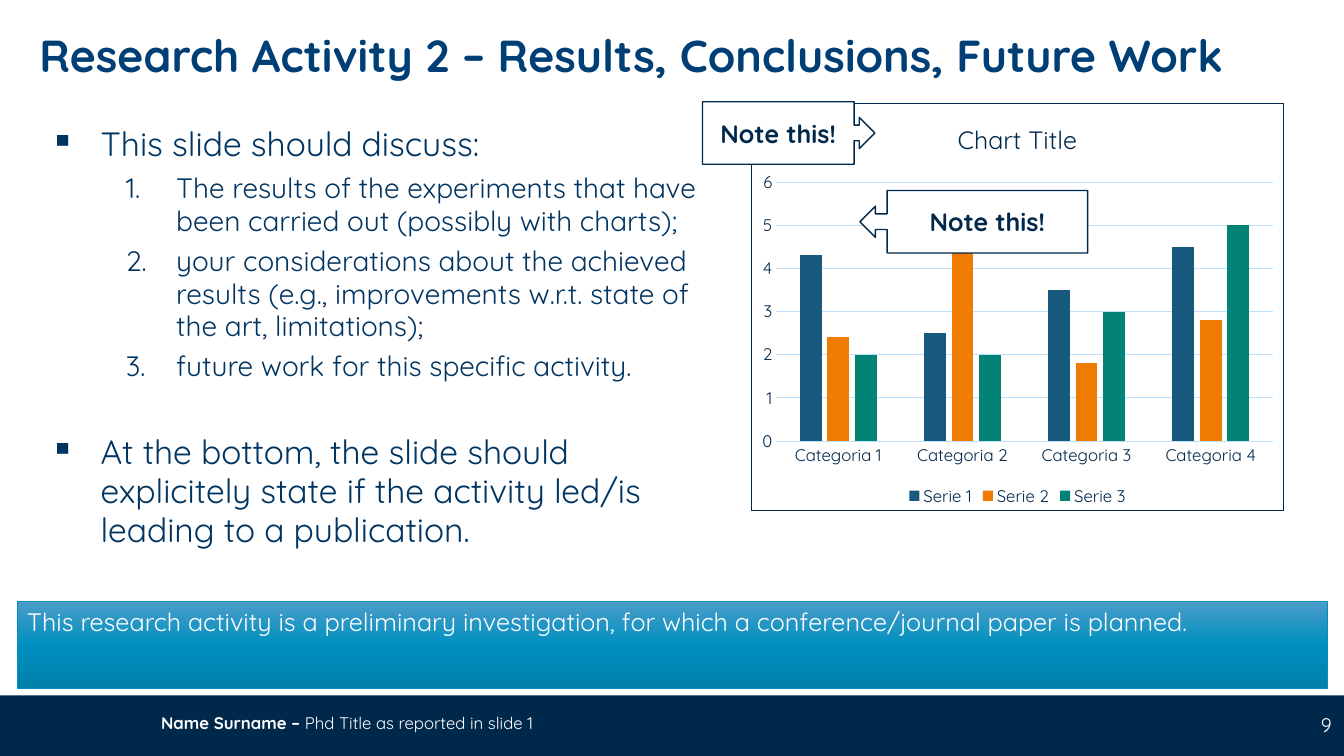
from dataclasses import dataclass
from typing import Optional

from lxml import etree
from pptx import Presentation
from pptx import util as u
from pptx.chart import data as chart_data
from pptx.dml import color
from pptx.enum import chart as chart_enum
from pptx.enum import shapes, text
from pptx.oxml import parse_xml
from pptx.oxml.ns import nsdecls, qn

FONT = "Quicksand"
COLORS = {
    "white": "FFFFFF", "navy": "00284B", "title": "003F76", "body": "003461",
    "grid": "BEE1FF", "banner_line": "028FBE", "banner_top": "4B9CC8",
    "banner_middle": "0090C0", "banner_bottom": "0080AB",
    "serie_1": "185A7D", "serie_2": "EF7B00", "serie_3": "038375",
}


@dataclass
class Area:
    left: float
    top: float
    width: float
    height: float

    def lengths(self) -> tuple:
        return tuple(u.Pt(n) for n in (self.left, self.top, self.width, self.height))


@dataclass
class Item:
    words: str
    numbered: bool = False
    before: Optional[float] = None


@dataclass
class Callout:
    area: Area
    flipped: bool


@dataclass
class Series:
    name: str
    values: tuple
    color: str


ITEMS = [
    Item("This slide should discuss:"),
    Item("The results of the experiments that have been carried out "
         "(possibly with charts);", True),
    Item("your considerations about the achieved results (e.g., improvements "
         "w.r.t. state of the art, limitations);", True),
    Item("future work for this specific activity.", True),
    Item("At the bottom, the slide should explicitely state if the activity "
         "led/is leading to a publication.", before=30),
]
CALLOUTS = [
    Callout(Area(614.2, 136.1, 162.7, 44.6), False),
    Callout(Area(501.8, 72.7, 123.1, 44.6), True),
]
CATEGORIES = [f"Categoria {n}" for n in range(1, 5)]
SERIES = [
    Series("Serie 1", (4.3, 2.5, 3.5, 4.5), "serie_1"),
    Series("Serie 2", (2.4, 4.4, 1.8, 2.8), "serie_2"),
    Series("Serie 3", (2, 2, 3, 5), "serie_3"),
]


def rgb(name: str) -> color.RGBColor:
    return color.RGBColor.from_string(COLORS[name])


def style(font, size: float, name: str, bold: bool = False) -> None:
    font.name = FONT
    font.size = u.Pt(size)
    font.bold = bold
    font.color.rgb = rgb(name)


def draw_line(line, name: str, width: float) -> None:
    line.fill.solid()
    line.fill.fore_color.rgb = rgb(name)
    line.width = u.Pt(width)


def add_box(page, area: Area):
    box = page.shapes.add_textbox(*area.lengths())
    box.text_frame.word_wrap = True
    return box


def add_panel(page, kind, area: Area, fill: str):
    panel = page.shapes.add_shape(kind, *area.lengths())
    panel.shadow.inherit = False
    panel.fill.solid()
    panel.fill.fore_color.rgb = rgb(fill)
    panel.line.fill.background()
    return panel


def add_title(page) -> None:
    title = page.shapes.title
    title.left, title.top, title.width, title.height = Area(20.9, 14.4, 918, 85).lengths()
    frame = title.text_frame
    frame.auto_size = text.MSO_AUTO_SIZE.NONE
    frame.vertical_anchor = text.MSO_ANCHOR.TOP
    para = frame.paragraphs[0]
    para.text = "Research Activity 2 – Results, Conclusions, Future Work"
    para.alignment = text.PP_ALIGN.LEFT
    para.line_spacing = u.Pt(40)
    style(para.font, 32, "title", True)


def add_items(page) -> None:
    frame = add_box(page, Area(28.8, 86.4, 490.3, 368.6)).text_frame
    for index, item in enumerate(ITEMS):
        para = frame.add_paragraph() if index else frame.paragraphs[0]
        para.text = item.words
        para.level = int(item.numbered)
        para.line_spacing = 0.96
        para.space_after = u.Pt(6)
        if item.before:
            para.space_before = u.Pt(item.before)
        props = para._p.get_or_add_pPr()
        props.set("marL", str(u.Pt(90 if item.numbered else 36)))
        props.set("indent", str(u.Pt(-36)))
        if item.numbered:
            etree.SubElement(props, qn("a:buAutoNum"), type="arabicPeriod")
        else:
            etree.SubElement(props, qn("a:buChar"), char="▪")
        style(para.font, 20 if item.numbered else 24, "body")


def add_footer(page) -> None:
    para = add_box(page, Area(108, 505.4, 743, 28.8)).text_frame.paragraphs[0]
    for words, bold in (("Name Surname – ", True),
                        ("Phd Title as reported in slide 1", False)):
        span = para.add_run()
        span.text = words
        style(span.font, 12, "white", bold)
    number = add_box(page, Area(913, 505.4, 45.4, 28.8)).text_frame.paragraphs[0]
    number.text = "9"
    number.alignment = text.PP_ALIGN.RIGHT
    style(number.font, 14, "white")


def add_banner(page) -> None:
    banner = add_panel(page, shapes.MSO_SHAPE.RECTANGLE,
                       Area(12.2, 429.8, 936, 61.9), "banner_middle")
    banner.fill.gradient()
    banner.fill.gradient_angle = 270
    stops = banner._element.spPr.find(".//" + qn("a:gsLst"))
    for stop in list(stops):
        stops.remove(stop)
    for index, name in enumerate(("banner_top", "banner_middle", "banner_bottom")):
        stop = etree.SubElement(stops, qn("a:gs"), pos=str(index * 50000))
        etree.SubElement(stop, qn("a:srgbClr"), val=COLORS[name])
    draw_line(banner.line, "banner_line", 0.5)
    banner.text_frame.vertical_anchor = text.MSO_ANCHOR.TOP
    para = banner.text_frame.paragraphs[0]
    para.text = ("This research activity is a preliminary investigation, "
                 "for which a conference/journal paper is planned.")
    para.alignment = text.PP_ALIGN.LEFT
    style(para.font, 18, "white")


def add_chart(page) -> None:
    data = chart_data.CategoryChartData()
    data.categories = CATEGORIES
    for series in SERIES:
        data.add_series(series.name, series.values)
    chart = page.shapes.add_chart(chart_enum.XL_CHART_TYPE.COLUMN_CLUSTERED,
                                  *Area(536.4, 73.4, 380.9, 291.6).lengths(), data).chart
    style(chart.font, 10, "navy")
    chart.has_title = True
    para = chart.chart_title.text_frame.paragraphs[0]
    para.text = "Chart Title"
    style(para.font, 18, "navy")
    chart.has_legend = True
    chart.legend.position = chart_enum.XL_LEGEND_POSITION.BOTTOM
    chart.legend.include_in_layout = False
    style(chart.legend.font, 12, "navy")
    for axis in (chart.category_axis, chart.value_axis):
        axis.major_tick_mark = axis.minor_tick_mark = chart_enum.XL_TICK_MARK.NONE
        style(axis.tick_labels.font, 12, "navy")
    draw_line(chart.category_axis.format.line, "grid", 0.75)
    values = chart.value_axis
    values.minimum_scale, values.maximum_scale, values.major_unit = 0, 6, 1
    values.format.line.fill.background()
    draw_line(values.major_gridlines.format.line, "grid", 0.75)
    plot = chart.plots[0]
    plot.gap_width, plot.overlap, plot.vary_by_categories = 219, -27, False
    for bars, series in zip(plot.series, SERIES):
        bars.format.fill.solid()
        bars.format.fill.fore_color.rgb = rgb(series.color)
    frame = parse_xml(
        f'<c:spPr {nsdecls("c", "a")}>'
        f'<a:solidFill><a:srgbClr val="{COLORS["white"]}"/></a:solidFill>'
        f'<a:ln w="{u.Pt(1)}"><a:solidFill><a:srgbClr val="{COLORS["navy"]}"/>'
        '</a:solidFill></a:ln></c:spPr>')
    chart._chartSpace.find(qn("c:chart")).addnext(frame)


def add_callout(page, callout: Callout) -> None:
    note = add_panel(page, shapes.MSO_SHAPE.LEFT_ARROW_CALLOUT, callout.area, "white")
    for index, value in enumerate((0.25, 0.25, 0.25, 0.877)):
        note.adjustments[index] = round(value, 2)
    if callout.flipped:
        note._element.spPr.find(qn("a:xfrm")).set("flipH", "1")
    draw_line(note.line, "navy", 1)
    note.text_frame.vertical_anchor = text.MSO_ANCHOR.MIDDLE
    para = note.text_frame.paragraphs[0]
    para.text = "Note this!"
    para.alignment = text.PP_ALIGN.CENTER
    style(para.font, 18, "navy", True)


def main() -> None:
    deck = Presentation()
    deck.slide_width, deck.slide_height = u.Pt(960), u.Pt(540)
    page = deck.slides.add_slide(deck.slide_layouts[5])
    add_panel(page, shapes.MSO_SHAPE.RECTANGLE, Area(0, 496.8, 960, 43.2), "navy")
    add_title(page)
    add_items(page)
    add_footer(page)
    add_banner(page)
    add_chart(page)
    for callout in CALLOUTS:
        add_callout(page, callout)
    deck.save("out.pptx")


if __name__ == "__main__":
    main()
